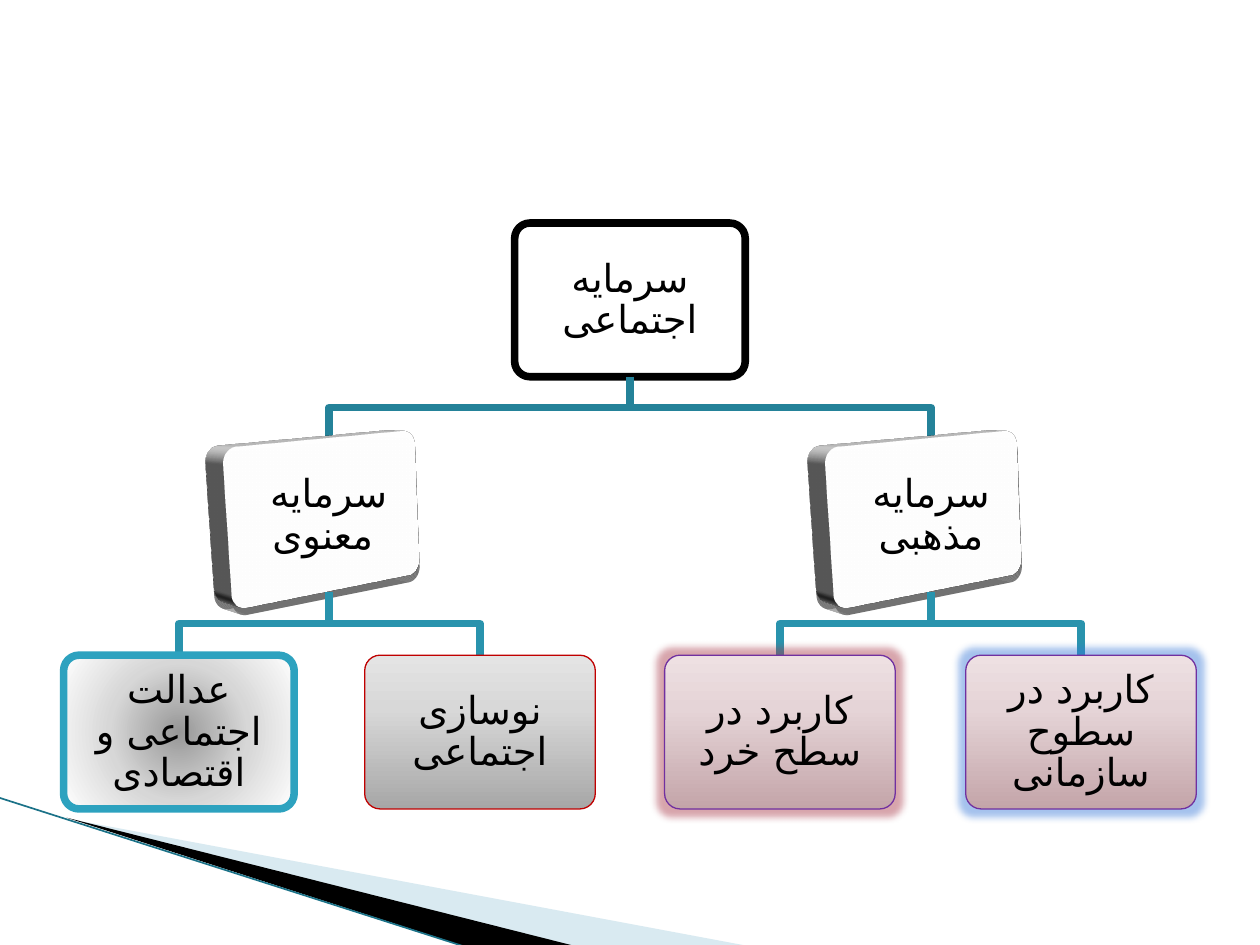
from pptx import Presentation, util as u
from pptx.enum import shapes, text
from pptx.dml.color import RGBColor
from pptx.oxml import parse_xml
from pptx.oxml.ns import nsdecls, qn

COLORS = {
    "black": "000000", "white": "FFFFFF", "pale": "A0CBDC", "edge": "1B7288",
    "upper": "248299", "lower": "2993AD", "teal": "2DA2BF", "red": "C00000",
    "purple": "7030A0", "pink_glow": "A83848", "blue_glow": "3878D8",
}
GREY = [(0, "A7A7A7"), (65, "D8D8D8"), (100, "E4E4E4")]
ROSE = [(0, "C4A5A9"), (65, "E5D4D7"), (100, "EEE0E2")]
RADIAL = [(0, "979797"), (50, "D7D7D7"), (100, "FFFFFF")]
WIDTH, HEIGHT = 1.83, 1.22
ROWS = [1.77, 3.48, 5.2]
BRANCHES = [
    (2.61, "سرمایه معنوی ", [
        (1.42, "عدالت اجتماعی و اقتصادی", RADIAL, "teal", 4.33, None),
        (3.81, "نوسازی اجتماعی", GREY, "red", 0.75, None)]),
    (7.39, "سرمایه مذهبی", [
        (6.19, "کاربرد در سطح خرد", ROSE, "purple", 0.75, "pink_glow"),
        (8.58, "کاربرد در سطوح سازمانی", ROSE, "purple", 0.75, "blue_glow")]),
]


class Chart:
    """Draws the parts of the hierarchy on one slide."""

    font = "DejaVu Sans Mono"
    script_font = "DejaVu Sans"
    size = 22

    def __init__(self, page):
        self.page = page

    def color(self, name):
        return RGBColor.from_string(COLORS[name])

    def paint(self, shape, fill=None, line=None, width=0.75):
        shape.shadow.inherit = False
        if fill:
            shape.fill.solid()
            shape.fill.fore_color.rgb = self.color(fill)
        else:
            shape.fill.background()
        if line:
            shape.line.color.rgb = self.color(line)
            shape.line.width = u.Pt(width)
        else:
            shape.line.fill.background()

    def outline(self, points, fill=None, line=None, width=0.75):
        spots = [(u.Inches(x), u.Inches(y)) for x, y in points]
        builder = self.page.shapes.build_freeform(*spots[0])
        builder.add_line_segments(spots[1:], close=bool(fill))
        shape = builder.convert_to_shape()
        self.paint(shape, fill, line, width)
        return shape

    def line(self, start, end, color, width):
        line = self.page.shapes.add_connector(
            shapes.MSO_CONNECTOR.STRAIGHT, *map(u.Inches, start + end))
        line.line.color.rgb = self.color(color)
        line.line.width = u.Pt(width)
        line._element.spPr.append(parse_xml(f"<a:effectLst {nsdecls('a')}/>"))

    def link(self, parent, child, row, color):
        top, bottom = ROWS[row] + HEIGHT, ROWS[row + 1]
        middle = (top + bottom) / 2
        self.outline([(parent, top), (parent, middle), (child, middle), (child, bottom)],
                     line=color, width=4.33)

    def gradient(self, shape, stops):
        shape.fill.gradient()
        if stops is RADIAL:
            way = ('<a:path path="circle"><a:fillToRect l="50000" t="50000" '
                   'r="50000" b="50000"/></a:path>')
        else:
            way = '<a:lin ang="16200000" scaled="1"/>'
        marks = "".join(f'<a:gs pos="{pos * 1000}"><a:srgbClr val="{color}"/></a:gs>'
                        for pos, color in stops)
        properties = shape._element.spPr
        properties.replace(properties.find(qn("a:gradFill")), parse_xml(
            f"<a:gradFill {nsdecls('a')} rotWithShape=\"1\">"
            f"<a:gsLst>{marks}</a:gsLst>{way}</a:gradFill>"))

    def effect(self, shape, tag, settings, color, alpha):
        shape._element.spPr.find(qn("a:effectLst")).append(parse_xml(
            f"<a:{tag} {nsdecls('a')} {settings}><a:srgbClr val=\"{COLORS[color]}\">"
            f'<a:alpha val="{alpha * 1000}"/></a:srgbClr></a:{tag}>'))

    def label(self, center, row, words):
        box = self.page.shapes.add_textbox(
            u.Inches(center - 0.88), u.Inches(ROWS[row] + 0.04),
            u.Inches(1.76), u.Inches(1.15))
        frame = box.text_frame
        frame.word_wrap = True
        frame.vertical_anchor = text.MSO_ANCHOR.MIDDLE
        frame.margin_left = frame.margin_right = u.Inches(0.09)
        frame.margin_top = frame.margin_bottom = u.Inches(0.09)
        frame.text = words
        para = frame.paragraphs[0]
        para.alignment = text.PP_ALIGN.CENTER
        para.line_spacing = 0.9
        span = para.runs[0]
        span.font.size = u.Pt(self.size)
        span.font.name = self.font
        span.font.color.rgb = self.color("black")
        span.font._element.append(
            parse_xml(f"<a:cs {nsdecls('a')} typeface=\"{self.script_font}\"/>"))

    def card(self, center, row, line=None, width=0.75):
        shape = self.page.shapes.add_shape(
            shapes.MSO_SHAPE.ROUNDED_RECTANGLE, u.Inches(center - WIDTH / 2),
            u.Inches(ROWS[row]), u.Inches(WIDTH), u.Inches(HEIGHT))
        shape.adjustments[0] = 0.1
        self.paint(shape, "white", line, width)
        return shape

    def node(self, center, row, words, stops, line, width, glow=None):
        shape = self.card(center, row, line, width)
        if stops:
            self.gradient(shape, stops)
        if glow:
            self.effect(shape, "glow", 'rad="101600"', glow, 45)
        self.label(center, row, words)

    def slab(self, center, row, words):
        shape = self.card(center, row)
        self.effect(shape, "outerShdw", 'blurRad="226060" dist="50800" dir="5220000"',
                    "black", 33)
        properties = shape._element.spPr
        properties.append(parse_xml(
            f"<a:scene3d {nsdecls('a')}>"
            '<a:camera prst="perspectiveHeroicExtremeRightFacing"/>'
            '<a:lightRig rig="threePt" dir="t"/></a:scene3d>'))
        properties.append(parse_xml(
            f"<a:sp3d {nsdecls('a')} extrusionH=\"254000\" prstMaterial=\"matte\"/>"))
        self.label(center, row, words)

    def swoosh(self):
        band = self.outline([(0.55, 6.5), (5.95, 7.51), (4.56, 7.51)], "pale")
        band._element.spPr.find(qn("a:solidFill"))[0].append(
            parse_xml(f"<a:alpha {nsdecls('a')} val=\"40000\"/>"))
        self.outline([(0.53, 6.49), (4.57, 7.51), (3.72, 7.52)], "black")
        self.line((-0.01, 6.33), (3.71, 7.52), "edge", 0.95)


def main():
    deck = Presentation()
    deck.slide_width, deck.slide_height = u.Inches(10), u.Inches(7.5)
    chart = Chart(deck.slides.add_slide(deck.slide_layouts[6]))
    chart.swoosh()
    chart.node(5, 0, "سرمایه اجتماعی", None, "black", 4.33)
    for center, words, leaves in BRANCHES:
        chart.link(5, center, 0, "upper")
        chart.slab(center, 1, words)
        for leaf, *details in leaves:
            chart.link(center, leaf, 1, "lower")
            chart.node(leaf, 2, *details)
    deck.save("out.pptx")


if __name__ == "__main__":
    main()
